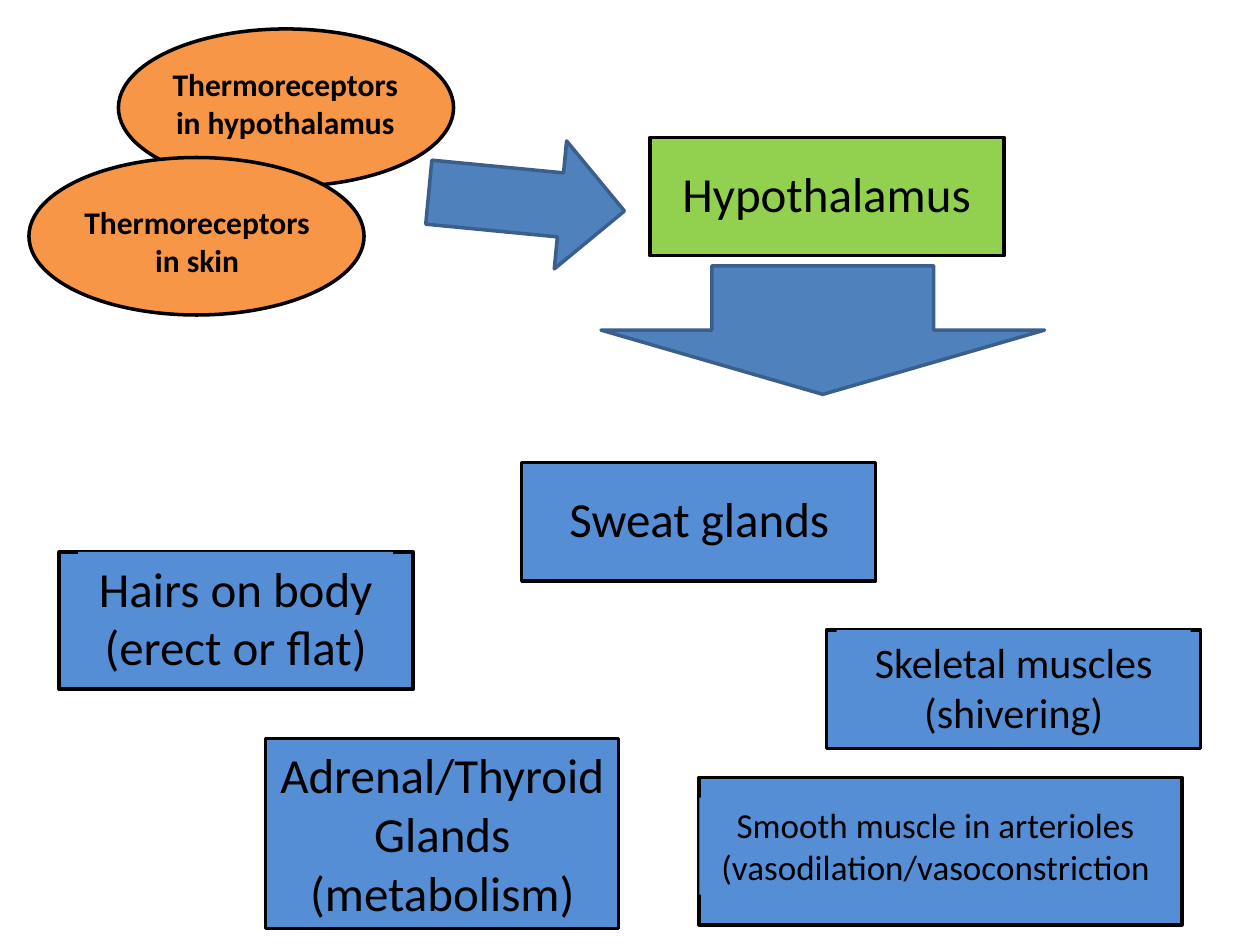
from pptx import Presentation
from pptx.dml.color import RGBColor
from pptx.enum.shapes import MSO_SHAPE
from pptx.enum.text import MSO_AUTO_SIZE, PP_ALIGN
from pptx.util import Inches, Pt

ELLIPSE = MSO_SHAPE.OVAL
RECTANGLE = MSO_SHAPE.RECTANGLE
RIGHT_ARROW = MSO_SHAPE.RIGHT_ARROW
DOWN_ARROW = MSO_SHAPE.DOWN_ARROW
CENTER = PP_ALIGN.CENTER
FIT_TEXT = MSO_AUTO_SIZE.SHAPE_TO_FIT_TEXT

BLACK = "000000"
ORANGE = "F79646"
GREEN = "92D050"
BLUE = "558ED5"
ARROW_BLUE = "4F81BD"
ARROW_EDGE = "3A5F8C"


def color(hex_value):
    return RGBColor.from_string(hex_value)


class DiagramSlide:
    font_name = "Calibri"
    line_width = 2

    def __init__(self, presentation):
        self.slide = presentation.slides.add_slide(presentation.slide_layouts[6])

    def shape(self, kind, box, fill, line=BLACK, rotation=0):
        shape = self.slide.shapes.add_shape(kind, *map(Inches, box))
        shape.shadow.inherit = False
        shape.fill.solid()
        shape.fill.fore_color.rgb = color(fill)
        shape.line.color.rgb = color(line)
        shape.line.width = Pt(self.line_width)
        shape.rotation = rotation

    def label(self, text, box, size, bold=False, fill=None, outline=None):
        label = self.slide.shapes.add_textbox(*map(Inches, box))
        if fill:
            label.fill.solid()
            label.fill.fore_color.rgb = color(fill)
        if outline:
            label.line.color.rgb = color(BLACK)
            label.line.width = Pt(outline)
        text_frame = label.text_frame
        text_frame.word_wrap = True
        text_frame.auto_size = FIT_TEXT
        text_frame.text = text
        paragraph = text_frame.paragraphs[0]
        paragraph.alignment = CENTER
        font = paragraph.runs[0].font
        font.name = self.font_name
        font.size = Pt(size)
        font.bold = bold
        font.color.rgb = color(BLACK)


def main():
    presentation = Presentation()
    presentation.slide_width = Inches(10)
    presentation.slide_height = Inches(7.5)
    diagram = DiagramSlide(presentation)

    # Thermoreceptors
    for left, top in ((0.94, 0.23), (0.23, 1.25)):
        diagram.shape(ELLIPSE, (left, top, 2.66, 1.25), ORANGE)
    for text, left, top in (
        ("Thermoreceptors in hypothalamus", 1.25, 0.47),
        ("Thermoreceptors in skin", 0.55, 1.56),
    ):
        diagram.label(text, (left, top, 2.03, 0.71), 18, bold=True)

    # Hypothalamus
    diagram.shape(RIGHT_ARROW, (3.4, 1.09, 1.56, 1.02), ARROW_BLUE, ARROW_EDGE, 5.5)
    diagram.shape(RECTANGLE, (5.16, 1.09, 2.81, 0.94), GREEN)
    diagram.label("Hypothalamus", (5.31, 1.25, 2.5, 0.57), 28)

    # Effectors: text, size, frame box, label box
    effectors = (
        ("Hairs on body (erect or flat)", 28,
         (0.47, 4.38, 2.81, 1.09), (0.62, 4.38, 2.5, 1.04)),
        ("Sweat glands", 28,
         (4.14, 3.67, 2.81, 0.94), (4.3, 3.83, 2.5, 0.57)),
        ("Skeletal muscles (shivering)", 24,
         (6.56, 5, 2.97, 0.94), (6.64, 5, 2.81, 0.91)),
        ("Smooth muscle in arterioles (vasodilation/vasoconstriction", 20,
         (5.55, 6.17, 3.83, 1.17), (5.55, 6.33, 3.75, 0.77)),
    )
    for text, size, frame_box, label_box in effectors:
        diagram.shape(RECTANGLE, frame_box, BLUE)
        diagram.label(text, label_box, size, fill=BLUE)
    diagram.label("Adrenal/Thyroid Glands (metabolism)", (2.11, 5.86, 2.8, 1.51), 28,
                  fill=BLUE, outline=1.75)

    # Arrow from the hypothalamus to the effectors
    diagram.shape(DOWN_ARROW, (4.77, 2.11, 3.52, 1.02), ARROW_BLUE, ARROW_EDGE)

    presentation.save("out.pptx")


if __name__ == "__main__":
    main()
